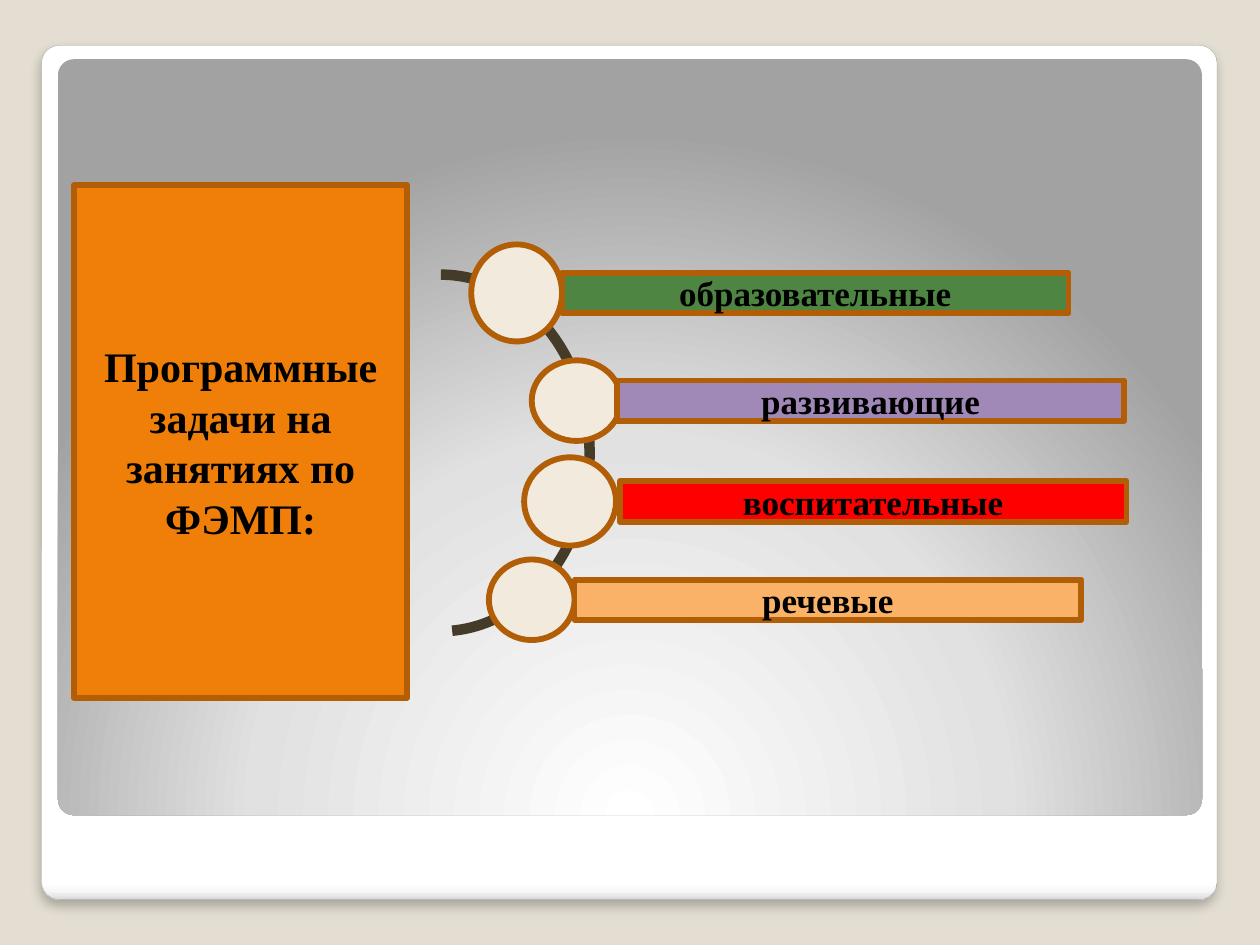
from lxml.etree import SubElement
from pptx import Presentation
from pptx.dml.color import RGBColor
from pptx.enum.shapes import MSO_SHAPE
from pptx.enum.text import MSO_ANCHOR, PP_ALIGN
from pptx.oxml.ns import qn
from pptx.util import Inches, Pt

WIDTH, HEIGHT = 10, 7.5
BACKGROUND, OUTLINE, CIRCLE_FILL, ARC_COLOR = "E3DED1", "B25E07", "F3EADE", "443C29"
OUTLINE_WIDTH = 3.35
CORNER = 0.021
BAR_WIDTH, BAR_HEIGHT = 4.02, 0.32

TITLE = "Программные задачи на занятиях по ФЭМП:"
CARD_STOPS = [(0, "FFFFFF"), (98, "FFFFFF"), (99, "F7F7F7"), (100, "DADADA")]
PANEL_STOPS = [(0, "FFFFFF"), (55, "E1E1E1"), (100, "A2A2A2")]
PANEL_FOCUS = {"l": 50, "t": 175, "r": 50, "b": -75}

TASKS = [
    ("образовательные", "4E8542", (3.74, 1.94, 0.72, 0.77), 4.46),
    ("развивающие", "A088B7", (4.22, 2.86, 0.71, 0.64), 4.9),
    ("воспитательные", "FF0000", (4.16, 3.63, 0.73, 0.7), 4.92),
    ("речевые", "F9B268", (3.88, 4.44, 0.68, 0.64), 4.56),
]


def color(value):
    return RGBColor.from_string(value)


def add_shape(slide, kind, box, fill=None, line=None, line_width=OUTLINE_WIDTH, adjustments=()):
    shape = slide.shapes.add_shape(kind, *map(Inches, box))
    shape.shadow.inherit = False
    for index, value in enumerate(adjustments):
        shape.adjustments[index] = value
    if fill:
        shape.fill.solid()
        shape.fill.fore_color.rgb = color(fill)
    else:
        shape.fill.background()
    if line:
        shape.line.color.rgb = color(line)
        shape.line.width = Pt(line_width)
    else:
        shape.line.fill.background()
    return shape


def add_color(parent, value, alpha=None):
    element = SubElement(parent, qn("a:srgbClr"), val=value)
    if alpha is not None:
        SubElement(element, qn("a:alpha"), val=str(alpha * 1000))


def set_gradient(shape, stops, angle=90, focus=None):
    properties = shape._element.spPr
    gradient = SubElement(properties, qn("a:gradFill"), rotWithShape="1")
    properties.replace(properties.find(qn("a:noFill")), gradient)
    stop_list = SubElement(gradient, qn("a:gsLst"))
    for position, value in stops:
        add_color(SubElement(stop_list, qn("a:gs"), pos=str(position * 1000)), value)
    if focus:
        path = SubElement(gradient, qn("a:path"), {"path": "circle"})
        SubElement(path, qn("a:fillToRect"), {side: str(share * 1000) for side, share in focus.items()})
    else:
        SubElement(gradient, qn("a:lin"), ang=str(angle * 60000), scaled="0")


def set_shadow(shape, value, alpha, blur, distance, angle):
    effects = shape._element.spPr.find(qn("a:effectLst"))
    shadow = SubElement(effects, qn("a:outerShdw"), blurRad=str(Pt(blur)), dist=str(Pt(distance)),
                        dir=str(angle * 60000), algn="tl", rotWithShape="0")
    add_color(shadow, value, alpha)


def write(shape, text, size, font="Times New Roman", text_color="000000", bold=True):
    frame = shape.text_frame
    frame.word_wrap = True
    frame.vertical_anchor = MSO_ANCHOR.MIDDLE
    paragraph = frame.paragraphs[0]
    paragraph.alignment = PP_ALIGN.CENTER
    run = paragraph.add_run()
    run.text = text
    run.font.name = font
    run.font.size = Pt(size)
    run.font.bold = bold
    run.font.color.rgb = color(text_color)


def main():
    presentation = Presentation()
    presentation.slide_width, presentation.slide_height = Inches(WIDTH), Inches(HEIGHT)
    slide = presentation.slides.add_slide(presentation.slide_layouts[6])
    slide.background.fill.solid()
    slide.background.fill.fore_color.rgb = color(BACKGROUND)

    card = add_shape(slide, MSO_SHAPE.ROUNDED_RECTANGLE, (0.33, 0.36, 9.33, 6.78),
                     line="A4A4A4", line_width=0.16, adjustments=[CORNER])
    set_gradient(card, CARD_STOPS)
    set_shadow(card, "000000", alpha=25, blur=6, distance=4, angle=90)
    panel = add_shape(slide, MSO_SHAPE.ROUNDED_RECTANGLE, (0.46, 0.47, 9.08, 6), adjustments=[CORNER])
    set_gradient(panel, PANEL_STOPS, focus=PANEL_FOCUS)

    title = add_shape(slide, MSO_SHAPE.RECTANGLE, (0.59, 1.47, 2.64, 4.07), "F07F09", OUTLINE)
    write(title, TITLE, size=24)
    add_shape(slide, MSO_SHAPE.ARC, (2.32, 2.18, 2.36, 2.83), line=ARC_COLOR, line_width=6,
              adjustments=[162, 51.83])

    for _, _, circle, _ in TASKS:
        add_shape(slide, MSO_SHAPE.FLOWCHART_CONNECTOR, circle, CIRCLE_FILL, OUTLINE)
    for text, fill, (_, top, _, height), left in TASKS:
        bar_top = top + (height - BAR_HEIGHT) / 2
        bar = add_shape(slide, MSO_SHAPE.FLOWCHART_PROCESS, (left, bar_top, BAR_WIDTH, BAR_HEIGHT), fill, OUTLINE)
        write(bar, text, size=20)

    presentation.save("out.pptx")


if __name__ == "__main__":
    main()
